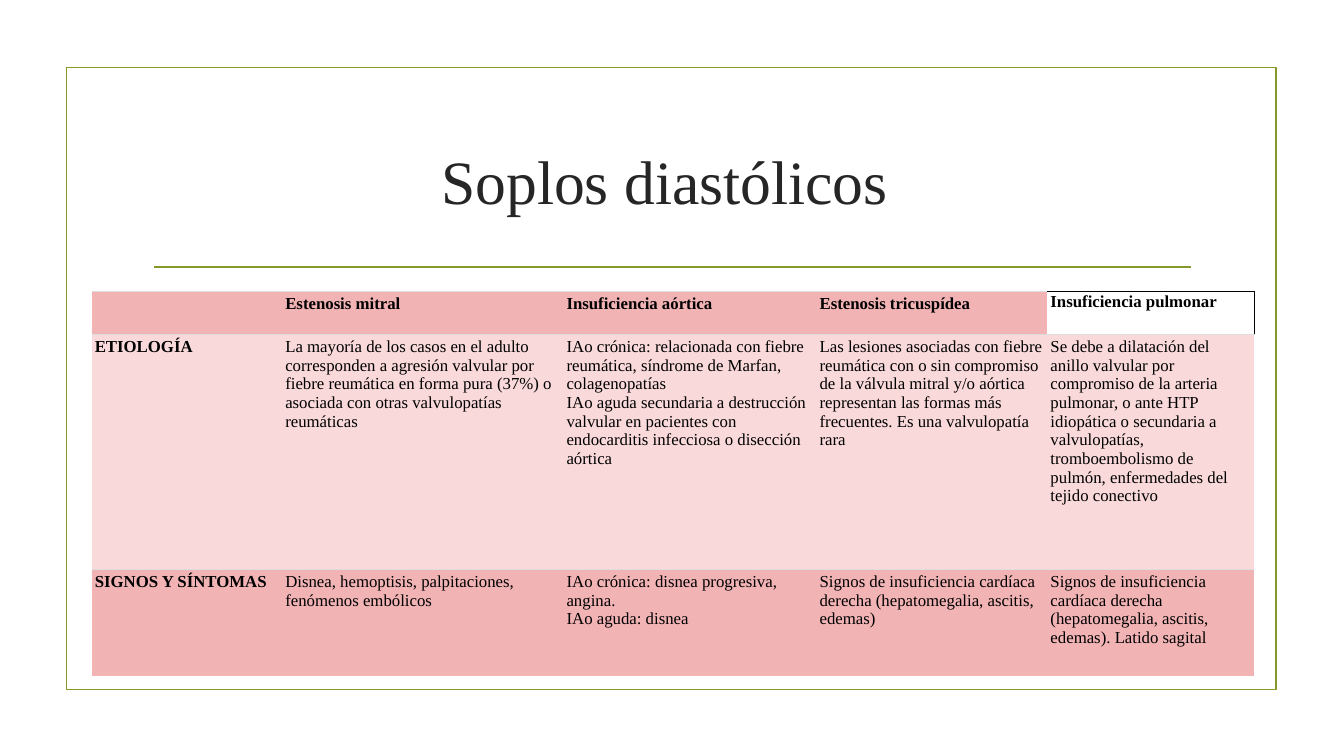
from lxml.etree import SubElement
from pptx import Presentation
from pptx.dml.color import RGBColor
from pptx.enum.shapes import MSO_CONNECTOR, MSO_SHAPE
from pptx.enum.text import MSO_ANCHOR, PP_ALIGN
from pptx.oxml import parse_xml
from pptx.oxml.ns import nsdecls, qn
from pptx.util import Inches, Pt

OLIVE = RGBColor(0x83, 0x99, 0x2A)
CHARCOAL = RGBColor(0x26, 0x26, 0x26)
BLACK = RGBColor(0, 0, 0)
ROSE = RGBColor(0xF2, 0xB3, 0xB5)
PALE_ROSE = RGBColor(0xF9, 0xD9, 0xDA)
GREY = RGBColor(0xDD, 0xDD, 0xDD)
FONT = "Times New Roman"
PLAIN_TABLE_STYLE = "{2D5ABB26-0587-4C30-8999-92F81FD0307C}"

COLUMN_WIDTHS = [1.89, 2.79, 2.51, 2.29, 2.05]
ROW_HEIGHTS = [0.43, 2.33, 1.06]
ROW_FILLS = [ROSE, PALE_ROSE, ROSE]
MURMURS = [
    ["", "Estenosis mitral", "Insuficiencia aórtica", "Estenosis tricuspídea",
     "Insuficiencia pulmonar"],
    ["ETIOLOGÍA",
     "La mayoría de los casos en el adulto corresponden a agresión valvular por "
     "fiebre reumática en forma pura (37%) o asociada con otras valvulopatías reumáticas",
     "IAo crónica: relacionada con fiebre reumática, síndrome de Marfan, colagenopatías\n"
     "IAo aguda secundaria a destrucción valvular en pacientes con endocarditis "
     "infecciosa o disección aórtica",
     "Las lesiones asociadas con fiebre reumática con o sin compromiso de la válvula "
     "mitral y/o aórtica representan las formas más frecuentes. Es una valvulopatía rara",
     "Se debe a dilatación del anillo valvular por compromiso de la arteria pulmonar, "
     "o ante HTP idiopática o secundaria a valvulopatías, tromboembolismo de pulmón, "
     "enfermedades del tejido conectivo"],
    ["SIGNOS Y SÍNTOMAS",
     "Disnea, hemoptisis, palpitaciones, fenómenos embólicos",
     "IAo crónica: disnea progresiva, angina.\nIAo aguda: disnea",
     "Signos de insuficiencia cardíaca derecha (hepatomegalia, ascitis, edemas)",
     "Signos de insuficiencia cardíaca derecha (hepatomegalia, ascitis, edemas). "
     "Latido sagital"],
]


def write_text(frame, text, size=12, color=BLACK, bold=False, align=PP_ALIGN.LEFT):
    frame.word_wrap = True
    frame.text = text
    for paragraph in frame.paragraphs:
        paragraph.alignment = align
        for font in [paragraph.font] + [run.font for run in paragraph.runs]:
            font.name = FONT
            font.size = Pt(size)
            font.bold = bold
            font.color.rgb = color


def add_frame(slide):
    frame = slide.shapes.add_shape(
        MSO_SHAPE.RECTANGLE, Inches(0.66), Inches(0.67), Inches(12), Inches(6.17))
    frame.shadow.inherit = False
    frame.fill.background()
    frame.line.color.rgb = OLIVE
    frame.line.width = Pt(1.25)


def add_rule(slide):
    rule = slide.shapes.add_connector(
        MSO_CONNECTOR.STRAIGHT, Inches(1.53), Inches(2.65), Inches(11.81), Inches(2.65))
    rule.line.color.rgb = OLIVE
    rule.line.width = Pt(1.25)
    SubElement(rule._element.spPr, qn("a:effectLst"))


def add_title(slide, text):
    title = slide.shapes.add_textbox(Inches(1.42), Inches(1.07), Inches(10.5), Inches(1.43))
    title.text_frame.vertical_anchor = MSO_ANCHOR.MIDDLE
    write_text(title.text_frame, text, size=44, color=CHARCOAL, align=PP_ALIGN.CENTER)


def set_borders(cell, **colors):
    properties = cell._tc.get_or_add_tcPr()
    sides = [side for side in ("lnL", "lnR", "lnT", "lnB") if side in colors]
    for position, side in enumerate(sides):
        properties.insert(position, parse_xml(
            f'<a:{side} {nsdecls("a")} w="9525"><a:solidFill>'
            f'<a:srgbClr val="{colors[side]}"/></a:solidFill></a:{side}>'))


def fill_cell(cell, text, fill, bold, vertical_margin=0.03):
    cell.margin_left = cell.margin_right = Inches(0.03)
    cell.margin_top = cell.margin_bottom = Inches(vertical_margin)
    cell.vertical_anchor = MSO_ANCHOR.TOP
    write_text(cell.text_frame, text, bold=bold)
    if fill is None:
        cell.fill.background()
    else:
        cell.fill.solid()
        cell.fill.fore_color.rgb = fill


def add_murmur_table(slide):
    murmurs = slide.shapes.add_table(
        len(ROW_HEIGHTS), len(COLUMN_WIDTHS), Inches(0.91), Inches(2.89),
        Inches(sum(COLUMN_WIDTHS)), Inches(sum(ROW_HEIGHTS))).table
    murmurs._tbl.tblPr.find(qn("a:tableStyleId")).text = PLAIN_TABLE_STYLE
    murmurs.horz_banding = False
    for column, width in zip(murmurs.columns, COLUMN_WIDTHS):
        column.width = Inches(width)
    for row, height in zip(murmurs.rows, ROW_HEIGHTS):
        row.height = Inches(height)
    for r, (texts, fill) in enumerate(zip(MURMURS, ROW_FILLS)):
        for c, text in enumerate(texts):
            cell = murmurs.cell(r, c)
            if r == 0 and c == len(texts) - 1:
                fill_cell(cell, text, None, True, vertical_margin=0.01)
                set_borders(cell, lnR=BLACK, lnT=BLACK, lnB=GREY)
            else:
                fill_cell(cell, text, fill, r == 0 or c == 0)
                if r == 0:
                    set_borders(cell, lnT=GREY, lnB=GREY)
                elif r == 1:
                    set_borders(cell, lnT=GREY)


def main():
    deck = Presentation()
    deck.slide_width = Inches(13.33)
    deck.slide_height = Inches(7.5)
    slide = deck.slides.add_slide(deck.slide_layouts[6])
    add_frame(slide)
    add_rule(slide)
    add_title(slide, "Soplos diastólicos ")
    add_murmur_table(slide)
    deck.save("out.pptx")


if __name__ == "__main__":
    main()
